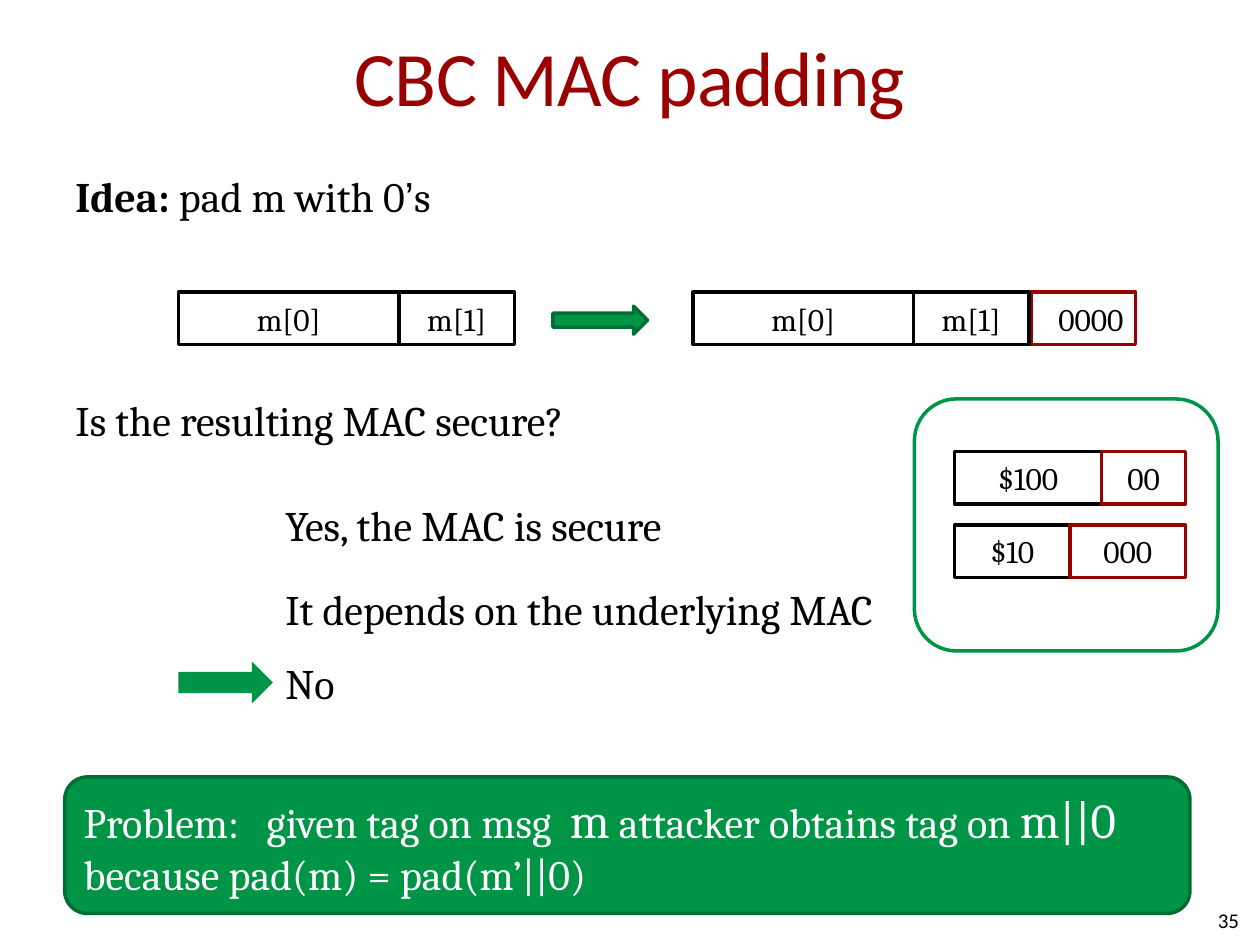
from pptx import Presentation
from pptx.dml.color import RGBColor
from pptx.enum import shapes, text
from pptx.util import Pt

BLACK = RGBColor(0, 0, 0)
WHITE = RGBColor(255, 255, 255)
RED = RGBColor(0x99, 0, 0)
GREEN = RGBColor(0, 0x94, 0x46)
DARK = RGBColor(0, 0x6D, 0x34)

KIND = shapes.MSO_SHAPE
LEFT, MID, RIGHT = text.PP_ALIGN.LEFT, text.PP_ALIGN.CENTER, text.PP_ALIGN.RIGHT
TOP, CENTER = text.MSO_ANCHOR.TOP, text.MSO_ANCHOR.MIDDLE


def write(shape, lines, align=LEFT, anchor=TOP, grow=False):
    """Each line is a list of runs: (words, size, font, color, bold)."""
    frame = shape.text_frame
    frame.word_wrap = False
    frame.vertical_anchor = anchor
    if grow:
        frame.auto_size = text.MSO_AUTO_SIZE.SHAPE_TO_FIT_TEXT
    para = frame.paragraphs[0]
    para.alignment = align
    for num, line in enumerate(lines):
        if num:
            para.add_line_break()
        for words, size, face, color, bold in line:
            run = para.add_run()
            run.text = words
            font = run.font
            font.size, font.name, font.bold = Pt(size), face, bold
            font.color.rgb = color


def part(words, size=24, face="Cambria", color=BLACK, bold=False):
    return words, size, face, color, bold


def label(tree, x, y, w, h, runs, **style):
    box = tree.add_textbox(Pt(x), Pt(y), Pt(w), Pt(h))
    write(box, [runs], **style)
    return box


def block(tree, kind, x, y, w, h, fill, line=None):
    shape = tree.add_shape(kind, Pt(x), Pt(y), Pt(w), Pt(h))
    shape.shadow.inherit = False
    shape.fill.solid()
    shape.fill.fore_color.rgb = fill
    if line is None:
        shape.line.fill.background()
    else:
        shape.line.color.rgb = line
        shape.line.width = Pt(2)
    return shape


def bar(tree, x, y, cells, align=MID):
    """Row of touching cells: (words, width, line color)."""
    for words, w, color in cells:
        cell = block(tree, KIND.RECTANGLE, x, y, w, 30, WHITE, color)
        write(cell, [[part(words, 18)]], align, CENTER)
        x += w


def heading(tree, x, y, w, h):
    box = label(tree, x, y, w, h, [part("CBC MAC padding", 44, "Calibri", RED)],
                align=MID, anchor=CENTER)
    box.text_frame.margin_left = box.text_frame.margin_right = 0
    for run in box.text_frame.paragraphs[0].runs:
        run.font._element.set("spc", "-50")


def padding(tree, x, y):
    message = [("m[0]", 126, BLACK), ("m[1]", 66, BLACK)]
    bar(tree, x, y, message)
    block(tree, KIND.RIGHT_ARROW, x + 214, y + 8, 54, 16, GREEN, DARK)
    bar(tree, x + 487, y, [("0000", 60, RED)], RIGHT)
    bar(tree, x + 294, y, message)


def answers(tree, x, y):
    rows = [("Yes, the MAC is secure", 0, 244),
            ("It depends on the underlying MAC", 48, 366),
            ("No", 90, 44)]
    for words, down, w in rows:
        label(tree, x, y + down, w, 36, [part(words)], grow=True)


def example(tree, x, y, w, h):
    group = tree.add_group_shape().shapes
    block(group, KIND.ROUNDED_RECTANGLE, x, y, w, h, WHITE, GREEN)
    bar(group, x + 23, y + 30, [("$100", 84, BLACK), ("00", 48, RED)])
    bar(group, x + 23, y + 72, [("$10", 66, BLACK), ("000", 66, RED)])


def verdict(tree, x, y, w, h):
    group = tree.add_group_shape().shapes
    panel = block(group, KIND.ROUNDED_RECTANGLE, x, y, w, h, GREEN, DARK)
    write(panel, [
        [part("Problem:   given tag on msg  ", color=WHITE),
         part("m", 28, color=WHITE),
         part(" attacker obtains tag on ", color=WHITE),
         part("m||0", 28, color=WHITE)],
        [part("because pad(m) = pad(m’||0)", color=WHITE)],
    ], grow=True)
    # Arrow at the right answer
    block(group, KIND.RIGHT_ARROW, x + 65, y - 66, 54, 24, GREEN)


def number(tree, x, y, w, h):
    box = label(tree, x, y, w, h, [part("35", 12, "Calibri")],
                align=RIGHT, anchor=CENTER)
    frame = box.text_frame
    frame.word_wrap = True
    frame.margin_left = frame.margin_right = 0
    frame.margin_top = frame.margin_bottom = 0


def main():
    deck = Presentation()
    deck.slide_width, deck.slide_height = Pt(720), Pt(540)
    tree = deck.slides.add_slide(deck.slide_layouts[6]).shapes

    heading(tree, 36, -2, 648, 90)
    answers(tree, 156, 282)
    padding(tree, 102, 167)

    # Idea and question
    label(tree, 36, 94, 233, 36,
          [part("Idea: ", bold=True), part("pad m with 0"),
           part("’", face="Arial"), part("s")], grow=True)
    label(tree, 36, 222, 307, 36, [part("Is the resulting MAC secure?")], grow=True)

    verdict(tree, 37, 444, 643, 78)
    example(tree, 522.5, 228, 173.5, 144)
    number(tree, 540, 511, 168, 29)
    deck.save("out.pptx")


if __name__ == "__main__":
    main()
